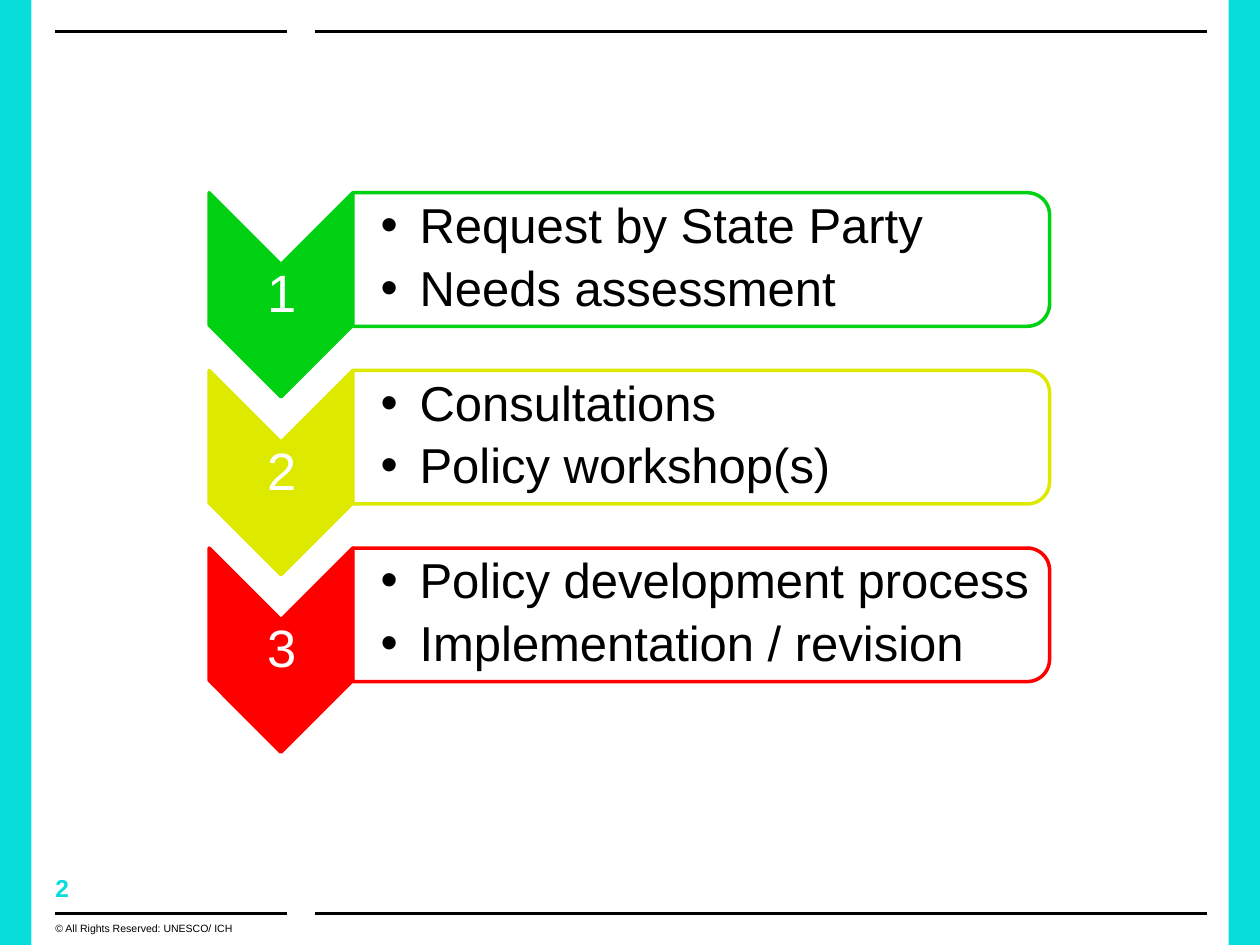
from dataclasses import dataclass

from lxml.etree import SubElement
from pptx import Presentation
from pptx.dml.color import RGBColor
from pptx.enum.shapes import MSO_CONNECTOR, MSO_SHAPE
from pptx.enum.text import MSO_ANCHOR, PP_ALIGN
from pptx.oxml.ns import qn
from pptx.util import Inches, Pt


@dataclass(frozen=True)
class Theme:
    font: str = "Arial"
    accent: str = "07DEDB"
    ink: str = "000000"
    paper: str = "FFFFFF"
    green: str = "00D213"
    yellow: str = "DEE900"
    red: str = "FF0000"
    line_width: float = 2
    step_size: float = 30
    bullet_size: float = 28
    page_size: float = 14
    credit_size: float = 6


class SlideBuilder:
    def __init__(self, slide, theme):
        self.slide = slide
        self.theme = theme

    def shape(self, kind, left, top, width, height, fill, outline=None, rotation=0, opacity=100):
        shape = self.slide.shapes.add_shape(
            kind, Inches(left), Inches(top), Inches(width), Inches(height))
        shape.shadow.inherit = False
        shape.rotation = rotation
        shape.fill.solid()
        shape.fill.fore_color.rgb = RGBColor.from_string(fill)
        if opacity < 100:
            color = shape.fill._xPr.find(qn("a:solidFill"))[0]
            SubElement(color, qn("a:alpha")).set("val", str(opacity * 1000))
        if outline:
            shape.line.color.rgb = RGBColor.from_string(outline)
            shape.line.width = Pt(self.theme.line_width)
        else:
            shape.line.fill.background()

    def turned_shape(self, kind, left, top, width, height, *colors, opacity=100):
        """Place a shape turned by 90 degrees, given the bounds it shows with."""
        shift = (width - height) / 2
        self.shape(kind, left + shift, top - shift, height, width, *colors,
                   rotation=90, opacity=opacity)

    def rule(self, start, end, y):
        rule = self.slide.shapes.add_connector(
            MSO_CONNECTOR.STRAIGHT, Inches(start), Inches(y), Inches(end), Inches(y))
        rule.line.color.rgb = RGBColor.from_string(self.theme.ink)
        rule.line.width = Pt(self.theme.line_width)
        SubElement(rule._element.spPr, qn("a:effectLst"))

    def text(self, left, top, width, height, lines, size, color, bold=False,
             align=PP_ALIGN.LEFT, anchor=MSO_ANCHOR.TOP, margin=0, indent=0,
             spacing=1.0, gap=0, bulleted=False):
        box = self.slide.shapes.add_textbox(
            Inches(left), Inches(top), Inches(width), Inches(height))
        frame = box.text_frame
        frame.word_wrap = True
        frame.vertical_anchor = anchor
        frame.margin_left = Inches(indent or margin)
        frame.margin_right = frame.margin_top = frame.margin_bottom = Inches(margin)
        for index, line in enumerate(lines):
            paragraph = frame.add_paragraph() if index else frame.paragraphs[0]
            paragraph.alignment = align
            paragraph.line_spacing = spacing
            if index:
                paragraph.space_before = Pt(gap)
            if bulleted:
                self.bullet(paragraph)
            run = paragraph.add_run()
            run.text = line
            run.font.name = self.theme.font
            run.font.size = Pt(size)
            run.font.bold = bold
            run.font.color.rgb = RGBColor.from_string(color)

    def bullet(self, paragraph):
        properties = paragraph._p.get_or_add_pPr()
        hang = Inches(0.31)
        properties.set("marL", str(hang))
        properties.set("indent", str(-hang))
        SubElement(properties, qn("a:buFont")).set("typeface", self.theme.font)
        SubElement(properties, qn("a:buChar")).set("char", "•")

    def step(self, number, top, color, items):
        theme = self.theme
        # Downward chevron with its number
        self.turned_shape(MSO_SHAPE.CHEVRON, 1.66, top, 1.14, 1.62, color, color)
        self.text(1.67, top + 0.57, 1.14, 0.49, [str(number)], theme.step_size, theme.paper,
                  align=PP_ALIGN.CENTER, anchor=MSO_ANCHOR.MIDDLE, margin=0.02, spacing=0.9)
        # Panel rounded on the right, with its activities
        self.turned_shape(MSO_SHAPE.ROUND_2_SAME_RECTANGLE, 2.8, top, 5.53, 1.06,
                          theme.paper, color, opacity=90)
        self.text(2.8, top + 0.05, 5.48, 0.95, items, theme.bullet_size, theme.ink,
                  anchor=MSO_ANCHOR.MIDDLE, margin=0.02, indent=0.22, spacing=0.9,
                  gap=5.5, bulleted=True)


def main():
    theme = Theme()
    presentation = Presentation()
    presentation.slide_width = Inches(10)
    presentation.slide_height = Inches(7.5)
    builder = SlideBuilder(
        presentation.slides.add_slide(presentation.slide_layouts[6]), theme)

    # Side bands
    for band_left in (0, 9.75):
        builder.shape(MSO_SHAPE.RECTANGLE, band_left, 0, 0.25, 7.5, theme.accent)

    # Header and footer rules
    for rule_y in (0.25, 7.25):
        builder.rule(0.44, 2.28, rule_y)
        builder.rule(2.5, 9.58, rule_y)

    # Page number and copyright
    builder.text(0.44, 6.93, 1.14, 0.24, ["2"], theme.page_size, theme.accent, bold=True)
    builder.text(0.44, 7.32, 1.83, 0.18, ["© All Rights Reserved: UNESCO/ ICH"],
                 theme.credit_size, theme.ink)

    # Process steps
    steps = [
        (theme.green, ["Request by State Party", "Needs assessment"]),
        (theme.yellow, ["Consultations", "Policy workshop(s)"]),
        (theme.red, ["Policy development process", "Implementation / revision"]),
    ]
    for index, (color, items) in enumerate(steps):
        builder.step(index + 1, 1.53 + index * 1.41, color, items)

    presentation.save("out.pptx")


if __name__ == "__main__":
    main()
